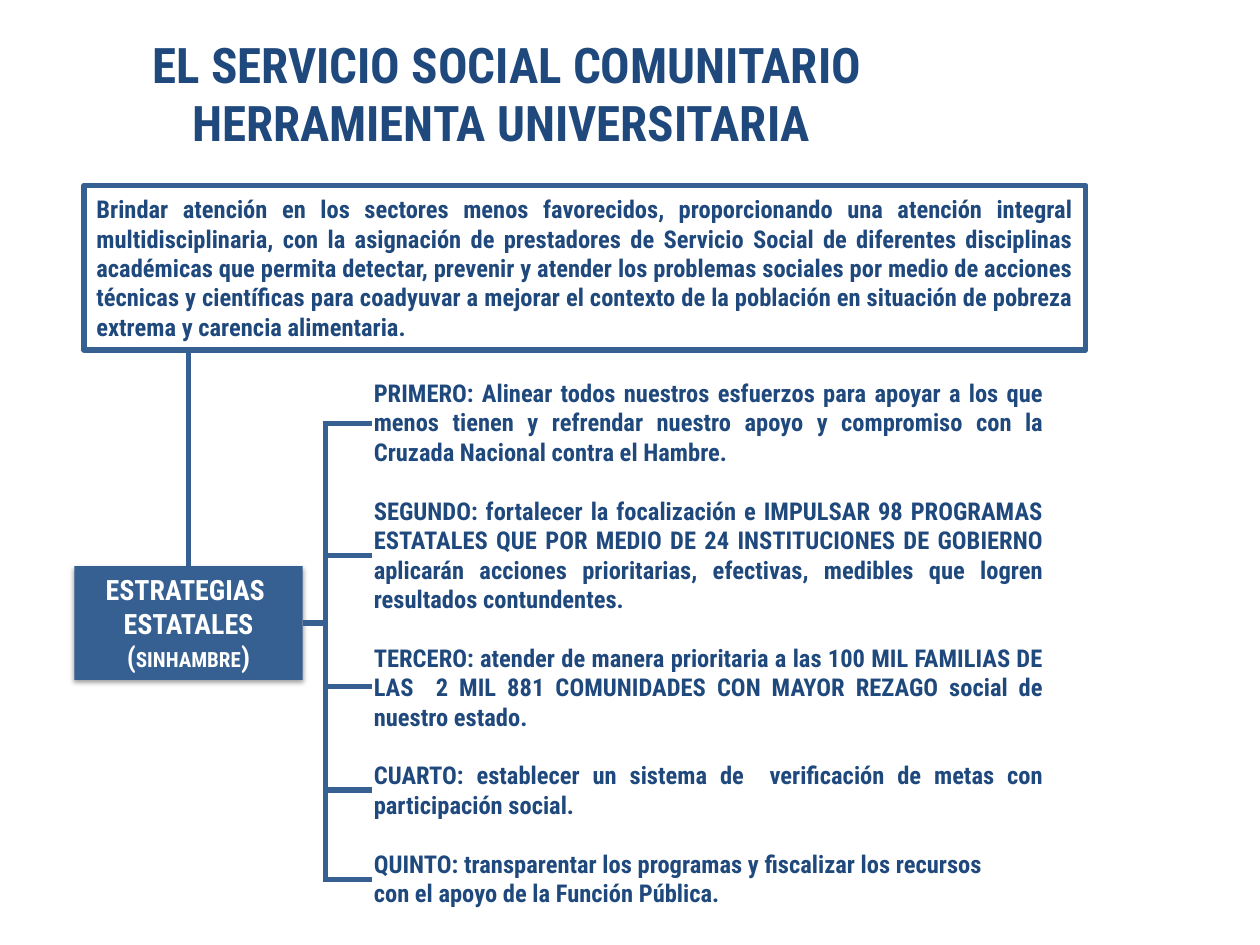
import pptx
import pptx.util
import pptx.dml.color
import pptx.enum.shapes
import pptx.enum.text
import pptx.oxml
import pptx.oxml.ns
from lxml import etree

Pt = pptx.util.Pt
ALIGN = pptx.enum.text.PP_ALIGN
ANCHOR = pptx.enum.text.MSO_ANCHOR
FONT = "Roboto Condensed"
NAVY, BLUE, WHITE = "1F497D", "376092", "FFFFFF"

TITLE = ["EL SERVICIO SOCIAL COMUNITARIO", "HERRAMIENTA UNIVERSITARIA "]
GOAL = (
    "Brindar atención en los sectores menos favorecidos, proporcionando una atención integral "
    "multidisciplinaria, con la asignación de prestadores de Servicio Social de diferentes "
    "disciplinas académicas que permita detectar, prevenir y atender los problemas sociales por "
    "medio de acciones técnicas y científicas para coadyuvar a mejorar el contexto de la población "
    "en situación de pobreza extrema y carencia alimentaria."
)
STRATEGIES = [
    ["PRIMERO: Alinear todos nuestros esfuerzos para apoyar a los que menos tienen y refrendar "
     "nuestro apoyo y compromiso con la Cruzada Nacional contra el Hambre."],
    ["SEGUNDO: fortalecer la focalización e IMPULSAR 98 PROGRAMAS ESTATALES QUE POR MEDIO DE 24 "
     "INSTITUCIONES DE GOBIERNO aplicarán acciones prioritarias, efectivas, medibles que logren "
     "resultados contundentes."],
    ["TERCERO: atender de manera prioritaria a las 100 MIL FAMILIAS DE LAS  2 MIL 881 COMUNIDADES "
     "CON MAYOR REZAGO social de nuestro estado."],
    ["CUARTO: establecer un sistema de  verificación de metas con participación social."],
    ["QUINTO: transparentar los programas y fiscalizar los recursos ",
     "con el apoyo de la Función Pública."],
]
BRANCH_HEIGHTS = [242, 317.5, 392.5, 451.5, 502.5]


def rgb(color):
    return pptx.dml.color.RGBColor.from_string(color)


def style(para, size, color, align):
    para.alignment = align
    para.font.name = FONT
    para.font.size = Pt(size)
    para.font.bold = True
    para.font.color.rgb = rgb(color)


def write(shape, lines, size, color, align, anchor=ANCHOR.TOP):
    frame = shape.text_frame
    frame.word_wrap = True
    frame.vertical_anchor = anchor
    for index, line in enumerate(lines):
        para = frame.paragraphs[0] if index == 0 else frame.add_paragraph()
        para.text = line
        style(para, size, color, align)
    return frame


def add_rectangle(page, left, top, width, height):
    box = page.shapes.add_shape(
        pptx.enum.shapes.MSO_SHAPE.RECTANGLE, Pt(left), Pt(top), Pt(width), Pt(height))
    box.shadow.inherit = False
    return box


def add_line(page, x1, y1, x2, y2):
    line = page.shapes.add_connector(
        pptx.enum.shapes.MSO_CONNECTOR.STRAIGHT, Pt(x1), Pt(y1), Pt(x2), Pt(y2))
    line.line.color.rgb = rgb(BLUE)
    line.line.width = Pt(3)
    etree.SubElement(line._element.spPr, pptx.oxml.ns.qn("a:effectLst"))
    return line


def add_soft_shadow(shape):
    effects = shape._element.spPr.find(pptx.oxml.ns.qn("a:effectLst"))
    effects.append(pptx.oxml.parse_xml(
        f'<a:outerShdw {pptx.oxml.ns.nsdecls("a")} blurRad="{Pt(3.1)}" dist="{Pt(1.6)}" '
        'dir="5400000" rotWithShape="0"><a:srgbClr val="000000"><a:alpha val="38000"/>'
        '</a:srgbClr></a:outerShdw>'))


def add_title(page, left, top, width, height):
    box = page.shapes.add_textbox(Pt(left), Pt(top), Pt(width), Pt(height))
    write(box, TITLE, 28, NAVY, ALIGN.CENTER)


def add_goal(page, left, top, width, height):
    box = add_rectangle(page, left, top, width, height)
    box.fill.background()
    box.line.color.rgb = rgb(BLUE)
    box.line.width = Pt(3)
    write(box, [GOAL], 14, NAVY, ALIGN.JUSTIFY, ANCHOR.MIDDLE)


def add_strategy_list(page, left, top, width, height):
    box = page.shapes.add_textbox(Pt(left), Pt(top), Pt(width), Pt(height))
    lines = [line for strategy in STRATEGIES for line in strategy]
    frame = write(box, lines, 14, NAVY, ALIGN.JUSTIFY)
    start = 0
    for strategy in STRATEGIES[:-1]:
        start += len(strategy)
        frame.paragraphs[start].space_before = Pt(16.8)


def add_heading(page, left, top, width, height):
    box = add_rectangle(page, left, top, width, height)
    box.fill.solid()
    box.fill.fore_color.rgb = rgb(BLUE)
    box.line.fill.background()
    add_soft_shadow(box)
    frame = write(box, ["ESTRATEGIAS ", "ESTATALES", ""], 16, WHITE, ALIGN.CENTER, ANCHOR.MIDDLE)
    for text, size in [("(", 16), ("SINHAMBRE", 12), (")", 16)]:
        span = frame.paragraphs[2].add_run()
        span.text = text
        span.font.size = Pt(size)
    return box


def add_bracket(page, left, trunk, right):
    add_line(page, trunk, BRANCH_HEIGHTS[0], trunk, BRANCH_HEIGHTS[-1])
    for y in BRANCH_HEIGHTS:
        add_line(page, left, y, right, y)


def main():
    deck = pptx.Presentation()
    deck.slide_width, deck.slide_height = Pt(720), Pt(540)
    page = deck.slides.add_slide(deck.slide_layouts[6])

    add_title(page, 20, 16, 539, 39)
    add_goal(page, 48, 106, 572.5, 94)
    add_strategy_list(page, 206.5, 212.5, 397, 312.5)
    heading = add_heading(page, 42.5, 323.5, 130.5, 65)
    add_bracket(page, 184.5, 186, 212.5)
    add_line(page, 173, 356, 186, 356).begin_connect(heading, 3)
    add_line(page, 107.75, 200, 107.75, 323.5).end_connect(heading, 0)

    deck.save("out.pptx")


if __name__ == "__main__":
    main()
